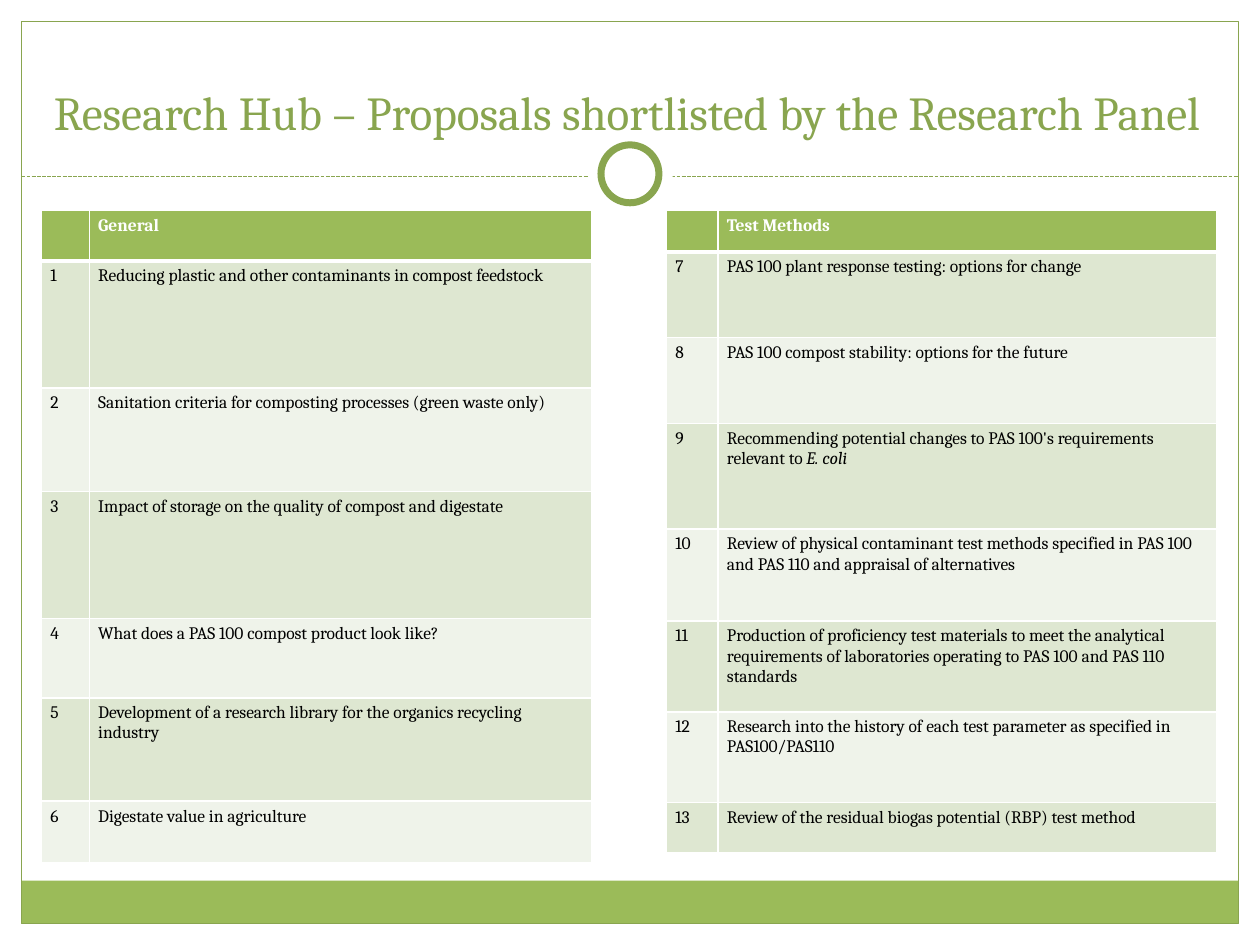
from dataclasses import dataclass
from typing import Optional

import pptx
import pptx.dml.color
import pptx.enum.dml
import pptx.enum.shapes
import pptx.enum.text
import pptx.oxml.ns
import pptx.oxml.xmlchemy
import pptx.util
from lxml import etree

Inches, Pt = pptx.util.Inches, pptx.util.Pt
RGBColor = pptx.dml.color.RGBColor
SHAPE = pptx.enum.shapes.MSO_SHAPE
qn = pptx.oxml.ns.qn

WHITE = RGBColor(0xFF, 0xFF, 0xFF)
BLACK = RGBColor(0x00, 0x00, 0x00)
GREEN = RGBColor(0x9B, 0xBB, 0x59)
DARK_GREEN = RGBColor(0x89, 0xA5, 0x4F)
BANDS = (RGBColor(0xDE, 0xE7, 0xD1), RGBColor(0xEF, 0xF3, 0xEA))
FONT = "Cambria"
TEXT_SIZE = Pt(10)


@dataclass
class Decor:
    left: float
    top: float
    width: float
    height: float
    fill: Optional[RGBColor] = WHITE
    line_width: float = 0
    kind: int = SHAPE.RECTANGLE


@dataclass
class ProposalTable:
    left: float
    heading: str
    first_number: int
    col_widths: tuple
    row_heights: tuple
    proposals: tuple  # a tuple entry holds plain text, then italic text


FRAME = (
    Decor(0, 0, 10, 1.52),
    Decor(0, 0, 0.17, 7.5),
    Decor(9.83, 0, 0.17, 7.5),
    Decor(0.17, 6.99, 9.66, 0.34, GREEN),
    Decor(0.17, 0.17, 9.66, 7.16, None, 0.75),
)
RING = (
    Decor(4.67, 1.05, 0.67, 0.67, kind=SHAPE.OVAL),
    Decor(4.77, 1.15, 0.46, 0.46, line_width=4, kind=SHAPE.OVAL),
)
TABLES = (
    ProposalTable(
        0.33, "General", 1, (0.38, 3.99),
        (0.4, 1.01, 0.82, 1.01, 0.63, 0.82, 0.49),
        (
            "Reducing plastic and other contaminants in compost feedstock",
            "Sanitation criteria for composting processes (green waste only)",
            "Impact of storage on the quality of compost and digestate",
            "What does a PAS 100 compost product look like?",
            "Development of a research library for the organics recycling industry",
            "Digestate value in agriculture",
        ),
    ),
    ProposalTable(
        5.29, "Test Methods", 7, (0.41, 3.96),
        (0.33, 0.68, 0.68, 0.84, 0.73, 0.72, 0.72, 0.4),
        (
            "PAS 100 plant response testing: options for change",
            "PAS 100 compost stability: options for the future",
            ("Recommending potential changes to PAS 100's requirements relevant to ",
             "E. coli"),
            "Review of physical contaminant test methods specified in PAS 100 "
            "and PAS 110 and appraisal of alternatives",
            "Production of proficiency test materials to meet the analytical "
            "requirements of laboratories operating to PAS 100 and PAS 110 standards",
            "Research into the history of each test parameter as specified in "
            "PAS100/PAS110",
            "Review of the residual biogas potential (RBP) test method",
        ),
    ),
)


def add_decor(slide, decor: Decor) -> None:
    sp = slide.shapes.add_shape(
        decor.kind, Inches(decor.left), Inches(decor.top),
        Inches(decor.width), Inches(decor.height))
    sp.shadow.inherit = False
    if decor.fill is None:
        sp.fill.background()
    else:
        sp.fill.solid()
        sp.fill.fore_color.rgb = decor.fill
    if decor.line_width:
        sp.line.color.rgb = DARK_GREEN
        sp.line.width = Pt(decor.line_width)
    else:
        sp.line.fill.background()


def add_divider(slide) -> None:
    line = slide.shapes.add_connector(
        pptx.enum.shapes.MSO_CONNECTOR.STRAIGHT,
        Inches(0.17), Inches(1.4), Inches(9.83), Inches(1.4))
    line.line.color.rgb = DARK_GREEN
    line.line.width = Pt(0.75)
    line.line.dash_style = pptx.enum.dml.MSO_LINE.SQUARE_DOT
    etree.SubElement(line._element.spPr, qn("a:effectLst"))


def set_borders(cell, top: float, bottom: float) -> None:
    tc_pr = cell._tc.get_or_add_tcPr()
    for side, width in (("L", 1), ("R", 1), ("T", top), ("B", bottom)):
        ln = etree.SubElement(tc_pr, qn(f"a:ln{side}"), w=str(Pt(width)))
        fill = etree.SubElement(ln, qn("a:solidFill"))
        etree.SubElement(fill, qn("a:srgbClr"), val=str(WHITE))


def add_run(p, text: str, size, color: RGBColor,
            bold: bool = False, italic: bool = False) -> None:
    r = p.add_run()
    r.text = text
    r.font.name = FONT
    r.font.size = size
    r.font.color.rgb = color
    r.font.bold = bold
    r.font.italic = italic


def fill_cell(cell, content, row: int) -> None:
    header = row == 0
    set_borders(cell, 3 if row == 1 else 1, 3 if header else 1)
    cell.fill.solid()
    cell.fill.fore_color.rgb = GREEN if header else BANDS[(row - 1) % 2]
    cell.margin_left = cell.margin_right = Inches(0.07)
    cell.margin_top = cell.margin_bottom = Inches(0.04)
    p = cell.text_frame.paragraphs[0]
    parts = content if isinstance(content, tuple) else (content,)
    for i, text in enumerate(parts):
        if text:
            add_run(p, text, TEXT_SIZE, WHITE if header else BLACK,
                    bold=header, italic=i == 1)
        else:  # keeps an empty cell from growing its row
            etree.SubElement(p._p, qn("a:endParaRPr"),
                             sz=str(int(TEXT_SIZE.pt * 100)))


def add_proposals(slide, data: ProposalTable) -> None:
    rows = [("", data.heading)]
    rows += [(str(n), text)
             for n, text in enumerate(data.proposals, data.first_number)]
    table = slide.shapes.add_table(
        len(rows), 2, Inches(data.left), Inches(1.67),
        Inches(sum(data.col_widths)), Inches(sum(data.row_heights))).table
    for column, width in zip(table.columns, data.col_widths):
        column.width = Inches(width)
    for i, (contents, height) in enumerate(zip(rows, data.row_heights)):
        table.rows[i].height = Inches(height)
        for j, content in enumerate(contents):
            fill_cell(table.cell(i, j), content, i)


def place_title(slide) -> None:
    title = slide.shapes.title
    title.left, title.top = Inches(0.31), Inches(0.33)
    title.width, title.height = Inches(9.33), Inches(0.83)
    tf = title.text_frame
    tf.word_wrap = True
    tf.auto_size = pptx.enum.text.MSO_AUTO_SIZE.NONE
    tf.margin_left = tf.margin_right = Inches(0.05)
    tf.vertical_anchor = pptx.enum.text.MSO_ANCHOR.BOTTOM
    p = tf.paragraphs[0]
    p.alignment = pptx.enum.text.PP_ALIGN.CENTER
    add_run(p, "Research Hub – Proposals shortlisted by the Research Panel",
            Pt(27), DARK_GREEN)
    slide.shapes._spTree.append(title._element)  # in front of the frame


def main() -> None:
    prs = pptx.Presentation()
    prs.slide_width, prs.slide_height = Inches(10), Inches(7.5)
    slide = prs.slides.add_slide(prs.slide_layouts[5])
    for decor in FRAME:
        add_decor(slide, decor)
    add_divider(slide)
    for decor in RING:
        add_decor(slide, decor)
    place_title(slide)
    for data in TABLES:
        add_proposals(slide, data)
    prs.save("out.pptx")


if __name__ == "__main__":
    main()
